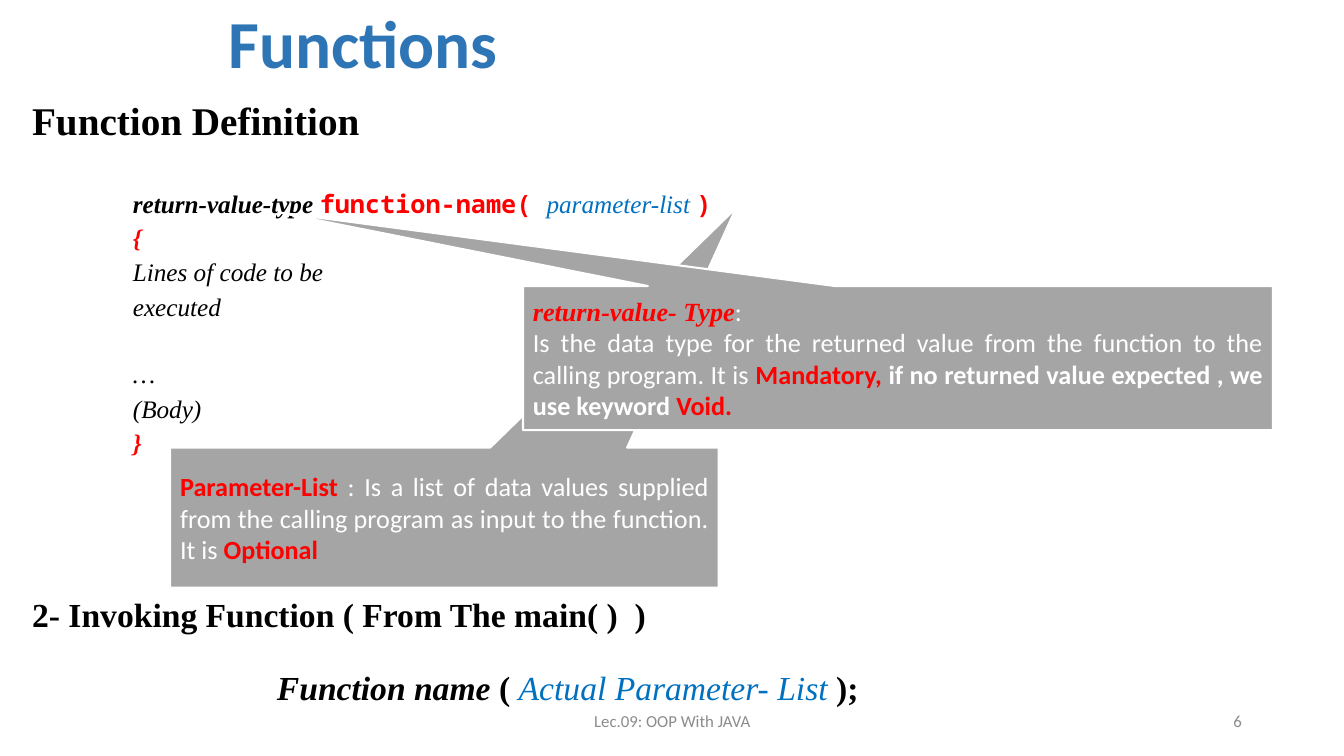
import pptx
import pptx.dml.color
import pptx.enum.shapes
import pptx.enum.text
from pptx.util import Cm, Pt

COLORS = {
    "title": "2E75B6",
    "black": "000000",
    "red": "FF0000",
    "blue": "0070C0",
    "white": "FFFFFF",
    "callout": "A5A5A5",
    "footer": "8C8C8C",
}
SANS, SERIF, MONO = "Calibri", "Times New Roman", "Noto Sans Mono"
ALIGN = pptx.enum.text.PP_ALIGN
MIDDLE = pptx.enum.text.MSO_ANCHOR.MIDDLE


def rgb(name):
    return pptx.dml.color.RGBColor.from_string(COLORS[name])


def styled(text, size, color="black", font=SERIF, style=""):
    """Describe one run; style holds b for bold and i for italic."""
    return text, size, color, font, style


def fill_paragraph(paragraph, runs, align=ALIGN.LEFT, spacing=1.0, before=0, indent=0):
    paragraph.alignment = align
    paragraph.line_spacing = spacing
    paragraph.space_before = Pt(before)
    if indent:
        properties = paragraph._p.get_or_add_pPr()
        properties.set("marL", str(Cm(indent)))
        properties.set("indent", "0")
    for text, size, color, font, style in runs:
        run = paragraph.add_run()
        run.text = text
        run.font.size = Pt(size)
        run.font.name = font
        run.font.bold = "b" in style
        run.font.italic = "i" in style
        run.font.color.rgb = rgb(color)


def fill_frame(frame, paragraphs, anchor=None):
    """Each paragraph is a pair: its runs and its paragraph options."""
    frame.word_wrap = True
    if anchor is not None:
        frame.vertical_anchor = anchor
    for index, (runs, options) in enumerate(paragraphs):
        paragraph = frame.add_paragraph() if index else frame.paragraphs[0]
        fill_paragraph(paragraph, runs, **options)


def add_text(slide, box, paragraphs, anchor=None):
    area = slide.shapes.add_textbox(*map(Cm, box))
    fill_frame(area.text_frame, paragraphs, anchor)


def add_callout(slide, box, tip, paragraphs):
    callout = slide.shapes.add_shape(
        pptx.enum.shapes.MSO_SHAPE.RECTANGULAR_CALLOUT, *map(Cm, box))
    callout.adjustments[0], callout.adjustments[1] = tip
    callout.shadow.inherit = False
    callout.fill.solid()
    callout.fill.fore_color.rgb = rgb("callout")
    callout.line.color.rgb = rgb("white")
    callout.line.width = Pt(1.5)
    justified = [(runs, {"align": ALIGN.JUSTIFY}) for runs in paragraphs]
    fill_frame(callout.text_frame, justified, MIDDLE)


def add_title(slide):
    title = slide.shapes.title
    title.left, title.top, title.width, title.height = map(Cm, (5.51, 0, 21.16, 2.34))
    heading = [styled("Functions", 48, "title", SANS, "b")]
    fill_frame(title.text_frame, [(heading, {"spacing": 0.9})], MIDDLE)


def add_definition(slide):
    signature = [
        styled("return-value-type ", 18, style="bi"),
        styled("function-name( ", 18, "red", MONO, "b"),
        styled("parameter-list ", 18, "blue", style="i"),
        styled(")", 18, "red", MONO, "b"),
    ]
    # Code lines with the space above each
    code = [
        (signature, 34),
        ([styled("{", 18, "red", style="bi")], 5),
        ([styled("Lines of code to be", 18, style="i")], 5),
        ([styled("executed", 18, style="i")], 5),
        ([styled("…", 18, style="i")], 29),
        ([styled("(Body)", 18, style="i")], 5),
        ([styled("}", 18, "red", style="bi")], 5),
    ]
    heading = [styled("Function Definition", 28, style="b")]
    paragraphs = [(heading, {"spacing": 0.9})]
    paragraphs += [(runs, {"spacing": 0.9, "before": before, "indent": 2.54})
                   for runs, before in code]
    add_text(slide, (0.56, 2.44, 33.02, 12.22), paragraphs)


def add_explanations(slide):
    size = 18.7
    add_callout(slide, (4.29, 11.28, 13.82, 3.53), (0.532, -2.211), [[
        styled("Parameter-List ", size, "red", SANS, "b"),
        styled(": Is a list of data values supplied from the calling program "
               "as input to the function. It is ", size, "white", SANS),
        styled("Optional ", size, "red", SANS, "b"),
    ]])
    add_callout(slide, (13.18, 7.21, 18.9, 3.63), (-0.826, -1.012), [
        [
            styled("return-value- Type", size, "red", SERIF, "bi"),
            styled(": ", size, "white", SANS),
        ],
        [
            styled("Is the data type for the returned value from the function "
                   "to the calling program. It is ", size, "white", SANS),
            styled("Mandatory, ", size, "red", SANS, "b"),
            styled("if no returned value expected , we use keyword",
                   size, "white", SANS, "b"),
            styled(" Void.", size, "red", SANS, "b"),
        ],
    ])


def add_invocation(slide):
    heading = [styled("2- Invoking Function ( From The main( )  )", 24, style="b")]
    call = [
        styled("Function name ", 24, style="bi"),
        styled("( ", 24, style="b"),
        styled("Actual Parameter- List ", 24, "blue", style="i"),
        styled(");", 24, style="b"),
    ]
    add_text(slide, (0.56, 14.96, 29.31, 3.02), [
        (heading, {"spacing": 0.9}),
        (call, {"spacing": 0.9, "before": 26, "indent": 6.17}),
    ])


def add_footer(slide):
    for left, width, text, align in (
            (11.23, 11.43, "Lec.09: OOP With JAVA", ALIGN.CENTER),
            (23.93, 7.62, "6", ALIGN.RIGHT)):
        runs = [styled(text, 12, "footer", SANS)]
        add_text(slide, (left, 17.65, width, 1.02), [(runs, {"align": align})], MIDDLE)


def main():
    presentation = pptx.Presentation()
    presentation.slide_width, presentation.slide_height = Cm(33.87), Cm(19.05)
    slide = presentation.slides.add_slide(presentation.slide_layouts[5])
    add_title(slide)
    add_definition(slide)
    add_explanations(slide)
    add_invocation(slide)
    add_footer(slide)
    presentation.save("out.pptx")


if __name__ == "__main__":
    main()
